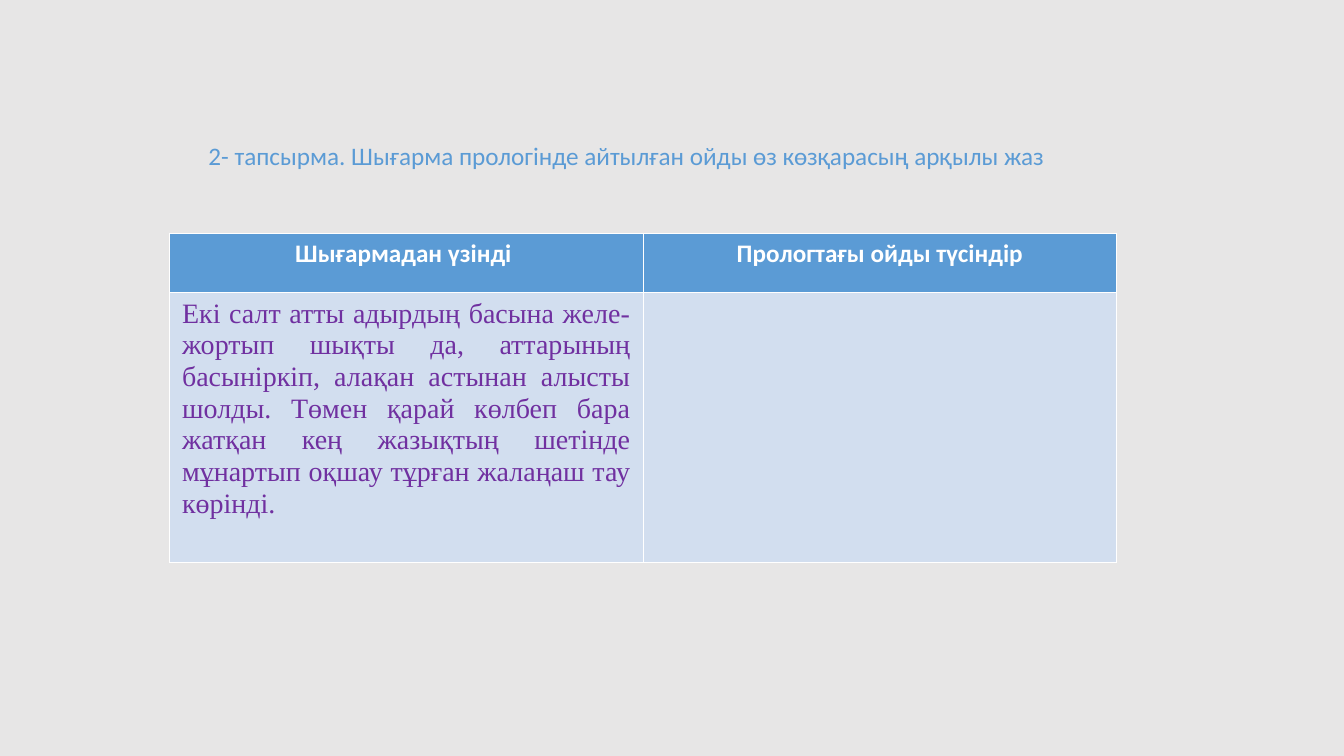
from lxml import etree
from pptx import Presentation
from pptx.dml.color import RGBColor
from pptx.enum.text import MSO_ANCHOR, PP_ALIGN
from pptx.oxml.ns import qn
from pptx.util import Cm, Pt

TOP = MSO_ANCHOR.TOP
LEFT, CENTER, JUSTIFY = PP_ALIGN.LEFT, PP_ALIGN.CENTER, PP_ALIGN.JUSTIFY
TITLE_ONLY_LAYOUT = 5

COLORS = {
    "background": "E7E6E6",
    "accent": "5B9BD5",
    "cell": "D2DEEF",
    "white": "FFFFFF",
    "excerpt": "7030A0",
}
THIN, THICK = Pt(0.45), Pt(1.47)

TASK = "2- тапсырма. Шығарма прологінде айтылған ойды өз көзқарасың арқылы жаз"
HEADERS = ["Шығармадан үзінді ", "Прологтағы ойды түсіндір"]
EXCERPT = (
    "Екі салт атты адырдың басына желе-жортып шықты да, аттарының "
    "басыніркіп, алақан астынан алысты шолды. Төмен қарай көлбеп бара "
    "жатқан кең жазықтың шетінде мұнартып оқшау тұрған жалаңаш тау көрінді."
)


def rgb(name):
    return RGBColor.from_string(COLORS[name])


def format_paragraph(paragraph, font_name, size, color, alignment, bold=False):
    paragraph.alignment = alignment
    paragraph.font.name = font_name
    paragraph.font.size = Pt(size)
    paragraph.font.bold = bold
    paragraph.font.color.rgb = rgb(color)


def set_background(slide):
    fill = slide.background.fill
    fill.solid()
    fill.fore_color.rgb = rgb("background")


def add_title(slide):
    title = slide.shapes.title
    title.left, title.top = Cm(5), Cm(3.4)
    title.width, title.height = Cm(21.62), Cm(1.02)
    frame = title.text_frame
    frame.text = TASK
    frame.word_wrap = False
    frame.vertical_anchor = TOP
    format_paragraph(frame.paragraphs[0], "Calibri", 18, "accent", LEFT)


def set_borders(cell, top, bottom):
    properties = cell._tc.get_or_add_tcPr()
    widths = {"a:lnL": THIN, "a:lnR": THIN, "a:lnT": top, "a:lnB": bottom}
    for position, (tag, width) in enumerate(widths.items()):
        line = etree.Element(qn(tag), w=str(int(width)))
        fill = etree.SubElement(line, qn("a:solidFill"))
        etree.SubElement(fill, qn("a:srgbClr"), val=COLORS["white"])
        properties.insert(position, line)


def style_cell(cell, fill, top, bottom):
    cell.fill.solid()
    cell.fill.fore_color.rgb = rgb(fill)
    set_borders(cell, top, bottom)


def add_task_table(slide):
    frame = slide.shapes.add_table(2, 2, Cm(4.27), Cm(5.87), Cm(23.88), Cm(8.31))
    table = frame.table
    table.rows[0].height = Cm(1.5)
    table.rows[1].height = Cm(6.81)

    for column, header in enumerate(HEADERS):
        header_cell = table.cell(0, column)
        header_cell.text = header
        style_cell(header_cell, "accent", THIN, THICK)
        format_paragraph(
            header_cell.text_frame.paragraphs[0], "Calibri", 18, "white", CENTER, True
        )
        style_cell(table.cell(1, column), "cell", THICK, THIN)

    excerpt_cell = table.cell(1, 0)
    excerpt_cell.text = EXCERPT
    excerpt_cell.margin_left = excerpt_cell.margin_right = Cm(0.32)
    paragraph = excerpt_cell.text_frame.paragraphs[0]
    paragraph.line_spacing = 1.02
    paragraph.space_after = Pt(10)
    format_paragraph(paragraph, "Times New Roman", 20, "excerpt", JUSTIFY)


def main():
    presentation = Presentation()
    presentation.slide_width = Cm(33.88)
    presentation.slide_height = Cm(19.05)
    slide = presentation.slides.add_slide(presentation.slide_layouts[TITLE_ONLY_LAYOUT])
    set_background(slide)
    add_title(slide)
    add_task_table(slide)
    presentation.save("out.pptx")


if __name__ == "__main__":
    main()
